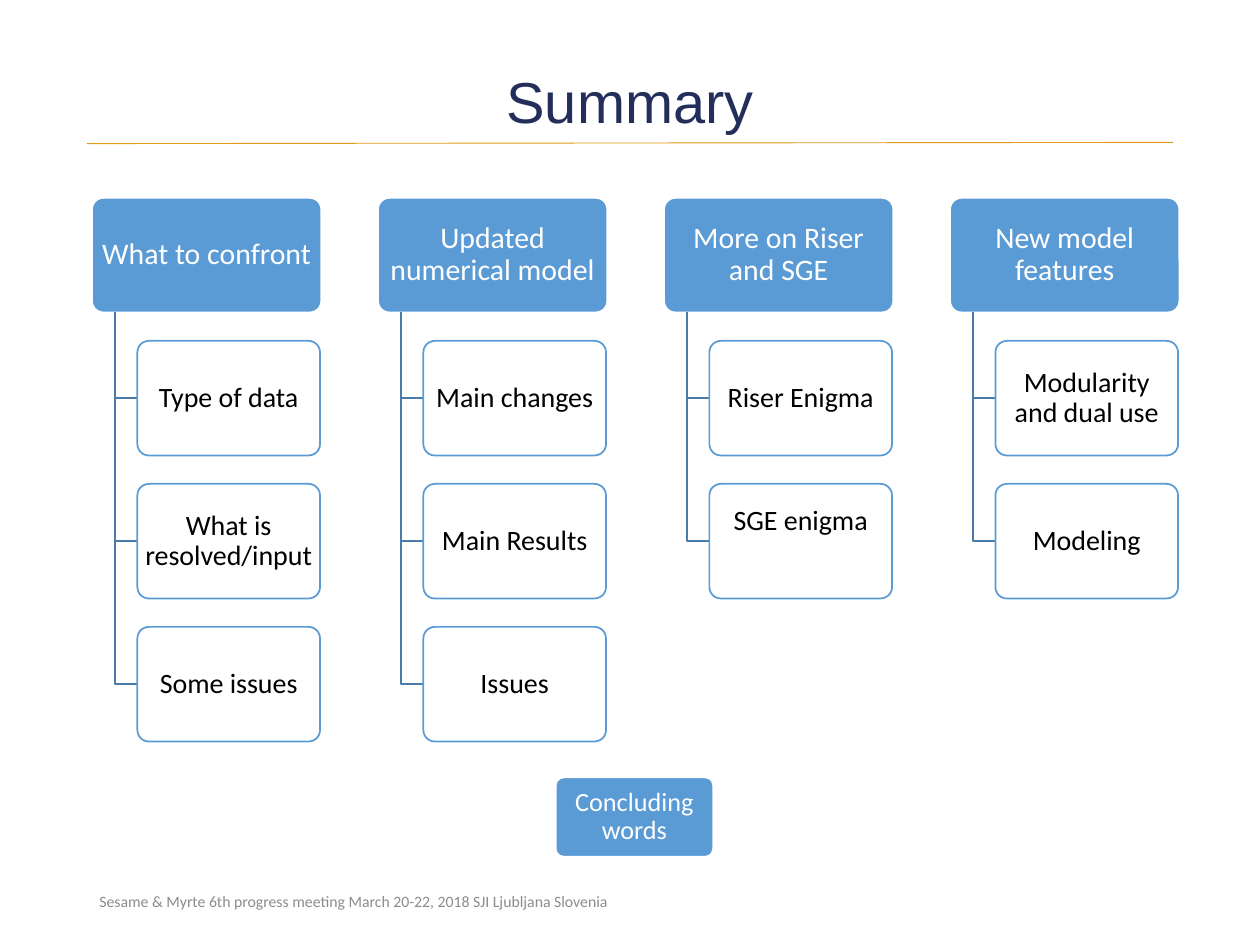
from pptx import Presentation
from pptx.dml.color import RGBColor
from pptx.enum.shapes import MSO_CONNECTOR, MSO_SHAPE
from pptx.enum.text import MSO_ANCHOR, MSO_AUTO_SIZE, PP_ALIGN
from pptx.oxml.ns import qn
from pptx.util import Inches, Pt
from lxml.etree import SubElement

WHITE = RGBColor(0xFF, 0xFF, 0xFF)
BLACK = RGBColor(0x00, 0x00, 0x00)
BLUE = RGBColor(0x5B, 0x9B, 0xD5)
BRANCH = RGBColor(0x49, 0x7C, 0xAB)
NAVY = RGBColor(0x23, 0x2E, 0x5B)
GOLD = RGBColor(0xE1, 0x9B, 0x15)
GREY = RGBColor(0x8C, 0x8C, 0x8C)

TOPICS = [
    ("What to confront", ["Type of data", "What is resolved/input", "Some issues"]),
    ("Updated numerical model", ["Main changes", "Main Results", "Issues"]),
    ("More on Riser and SGE", ["Riser Enigma", "SGE enigma"]),
    ("New model features", ["Modularity and dual use", "Modeling"]),
]
RAISED = "SGE enigma"
LEFT, TOP = 0.73, 1.57
COLUMN_STEP, ROW_STEP = 2.27, 1.135
HEAD_WIDTH, ITEM_WIDTH, BOX_HEIGHT = 1.82, 1.45, 0.91
INDENT = 0.18
INSET = 0.02


def set_text(shape, text, size, color, name="Calibri", align=PP_ALIGN.CENTER):
    """Write one vertically centred paragraph into a shape."""
    frame = shape.text_frame
    frame.word_wrap = True
    frame.auto_size = MSO_AUTO_SIZE.NONE
    frame.vertical_anchor = MSO_ANCHOR.MIDDLE
    para = frame.paragraphs[0]
    para.text = text
    para.alignment = align
    para.line_spacing = 0.9
    para.font.name = name
    para.font.size = Pt(size)
    para.font.color.rgb = color
    return frame


def add_box(page, left, top, width, height, text, size, filled):
    """Add a rounded box, either solid blue or outlined in blue."""
    box = page.shapes.add_shape(
        MSO_SHAPE.ROUNDED_RECTANGLE, Inches(left), Inches(top), Inches(width), Inches(height)
    )
    box.adjustments[0] = 0.1
    box.shadow.inherit = False
    box.fill.solid()
    box.fill.fore_color.rgb = BLUE if filled else WHITE
    box.line.color.rgb = WHITE if filled else BLUE
    box.line.width = Pt(1)
    frame = set_text(box, text, size, WHITE if filled else BLACK)
    frame.margin_left = frame.margin_right = Inches(INSET)
    frame.margin_top = frame.margin_bottom = Inches(INSET)
    return box


def add_branch(page, left, top, bottom):
    """Add an L-shaped line from a heading down to one of its items."""
    x, y = Inches(left), Inches(bottom)
    builder = page.shapes.build_freeform(x, Inches(top))
    builder.add_line_segments([(x, y), (Inches(left + INDENT), y)], close=False)
    branch = builder.convert_to_shape()
    branch.shadow.inherit = False
    branch.fill.background()
    branch.line.color.rgb = BRANCH
    branch.line.width = Pt(1)


def add_topic(page, left, heading, items):
    """Add a heading with its column of items."""
    add_box(page, left, TOP, HEAD_WIDTH, BOX_HEIGHT, heading, 17, True)
    trunk = left + INDENT
    for row, item in enumerate(items, start=1):
        top = TOP + row * ROW_STEP
        add_branch(page, trunk, TOP + BOX_HEIGHT, top + BOX_HEIGHT / 2)
        box = add_box(page, trunk + INDENT, top, ITEM_WIDTH, BOX_HEIGHT, item, 16, False)
        if item == RAISED:
            box.text_frame.margin_bottom = Inches(0.34)


def add_title(page):
    """Fill the title and draw the rule below it."""
    rule = page.shapes.add_connector(
        MSO_CONNECTOR.STRAIGHT, Inches(0.69), Inches(1.14), Inches(9.31), Inches(1.13)
    )
    rule.line.color.rgb = GOLD
    rule.line.width = Pt(0.5)
    SubElement(rule._element.spPr, qn("a:effectLst"))
    title = page.shapes.title
    title.left, title.top = Inches(0.69), Inches(0.4)
    title.width, title.height = Inches(8.62), Inches(0.86)
    set_text(title, "Summary", 33, NAVY, "Arial")


def add_footer(page):
    """Add the meeting line at the bottom."""
    footer = page.shapes.add_textbox(Inches(0.69), Inches(6.95), Inches(6), Inches(0.4))
    text = "Sesame & Myrte 6th progress meeting March 20-22, 2018 SJI Ljubljana Slovenia"
    frame = set_text(footer, text, 9, GREY, align=PP_ALIGN.LEFT)
    frame.paragraphs[0].line_spacing = 1.0


def main():
    """Build the summary slide."""
    deck = Presentation()
    deck.slide_width, deck.slide_height = Inches(10), Inches(7.5)
    page = deck.slides.add_slide(deck.slide_layouts[5])
    add_title(page)
    add_footer(page)
    for column, (heading, items) in enumerate(TOPICS):
        add_topic(page, LEFT + column * COLUMN_STEP, heading, items)
    add_box(page, 4.41, 6.17, 1.25, 0.63, "Concluding words", 15, True)
    deck.save("out.pptx")


if __name__ == "__main__":
    main()
